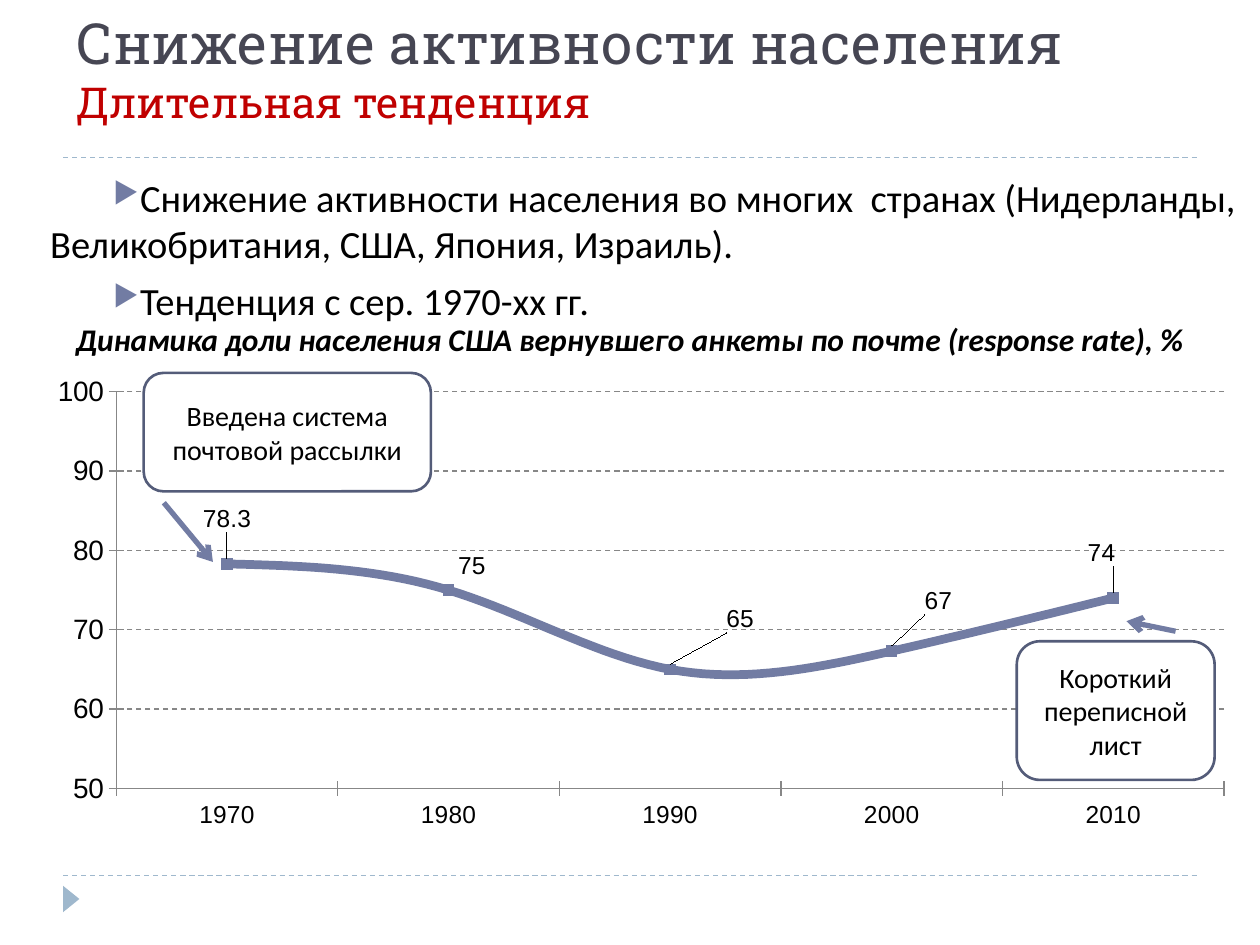
import copy
from dataclasses import dataclass
from typing import Optional

import pptx
import pptx.chart.data
import pptx.dml.color
import pptx.enum.chart
import pptx.enum.dml
import pptx.enum.shapes
import pptx.enum.text
import pptx.oxml
import pptx.oxml.ns
import pptx.util

Inches = pptx.util.Inches
Pt = pptx.util.Pt
qn = pptx.oxml.ns.qn
Align = pptx.enum.text.PP_ALIGN
Anchor = pptx.enum.text.MSO_ANCHOR
Dash = pptx.enum.dml.MSO_LINE
NAMESPACES = pptx.oxml.ns.nsdecls("a", "c")


@dataclass(frozen=True)
class Theme:
    heading_font: str = "Roboto Slab"
    body_font: str = "Calibri"
    chart_font: str = "Arial"
    ink: str = "000000"
    heading: str = "464653"
    warning: str = "C00000"
    accent: str = "727CA3"
    outline: str = "545C79"
    rule: str = "9FB8CD"
    grid: str = "878787"
    paper: str = "FFFFFF"
    title_size: float = 32.4
    subtitle_size: float = 24.3
    body_size: float = 22
    caption_size: float = 18
    note_size: float = 16
    axis_size: float = 16
    label_size: float = 14


THEME = Theme()


@dataclass(frozen=True)
class Area:
    left: float
    top: float
    width: float
    height: float

    def lengths(self) -> tuple:
        return tuple(Inches(v) for v in (self.left, self.top, self.width, self.height))


@dataclass(frozen=True)
class Line:
    start: tuple
    end: tuple
    color: str
    weight: float
    dashed: bool = False
    arrow: bool = False


@dataclass(frozen=True)
class Callout:
    area: Area
    text: str


@dataclass(frozen=True)
class Reading:
    year: str
    share: float
    shift: tuple  # label offset as a fraction of the chart
    label: Optional[str] = None


RULES = [Line((0.5, y), (9.5, y), THEME.rule, 0.75, dashed=True) for y in (6.95, 1.25)]
ARROWS = [Line(start, end, THEME.accent, 3, arrow=True)
          for start, end in (((9.33, 5.01), (8.94, 4.93)), ((1.3, 3.99), (1.69, 4.46)))]
CALLOUTS = [
    Callout(Area(8.07, 5.09, 1.57, 1.1), "Короткий переписной лист"),
    Callout(Area(1.14, 2.96, 2.28, 0.94), "Введена система почтовой рассылки"),
]
READINGS = [
    Reading("1970", 78.3, (0, -0.04)),
    Reading("1980", 75, (0.02, 0)),
    Reading("1990", 65, (0.06, -0.05)),
    Reading("2000", 67.3, (0.04, -0.05), "67"),
    Reading("2010", 74, (-0.01, -0.04)),
]
POINTS = [
    "Снижение активности населения во многих  странах "
    "(Нидерланды, Великобритания, США, Япония, Израиль).",
    "Тенденция с сер. 1970-хх гг.",
]


def rgb(color: str) -> pptx.dml.color.RGBColor:
    return pptx.dml.color.RGBColor.from_string(color)


def style_font(font, name: str, size: float, color: str = THEME.ink) -> None:
    font.name, font.size = name, Pt(size)
    font.color.rgb = rgb(color)


def add_span(para, text: str, name: str, size: float, color: str = THEME.ink):
    span = para.add_run()
    span.text = text
    style_font(span.font, name, size, color)
    return span


def add_box(page, area: Area, anchor=Anchor.TOP):
    frame = page.shapes.add_textbox(*area.lengths()).text_frame
    frame.word_wrap = True
    frame.vertical_anchor = anchor
    return frame


def add_line(page, line: Line) -> None:
    connector = page.shapes.add_connector(
        pptx.enum.shapes.MSO_CONNECTOR.STRAIGHT,
        *(Inches(v) for v in line.start + line.end))
    connector.line.color.rgb = rgb(line.color)
    connector.line.width = Pt(line.weight)
    if line.dashed:
        connector.line.dash_style = Dash.DASH
    if line.arrow:
        connector.line._get_or_add_ln().append(
            pptx.oxml.parse_xml(f'<a:tailEnd {NAMESPACES} type="arrow"/>'))
    connector._element.spPr.append(pptx.oxml.parse_xml(f"<a:effectLst {NAMESPACES}/>"))


def add_preset(page, kind, area: Area, fill: str):
    shape = page.shapes.add_shape(kind, *area.lengths())
    shape.shadow.inherit = False
    shape.fill.solid()
    shape.fill.fore_color.rgb = rgb(fill)
    return shape


def add_callout(page, callout: Callout) -> None:
    shape = add_preset(page, pptx.enum.shapes.MSO_SHAPE.ROUNDED_RECTANGLE,
                       callout.area, THEME.paper)
    shape.line.color.rgb = rgb(THEME.outline)
    shape.line.width = Pt(1.5)
    shape.text_frame.word_wrap = True
    shape.text_frame.vertical_anchor = Anchor.MIDDLE
    para = shape.text_frame.paragraphs[0]
    para.alignment = Align.CENTER
    add_span(para, callout.text, THEME.body_font, THEME.note_size)


def add_bullet(para, text: str) -> None:
    para.space_before = Pt(6)
    props = para._p.get_or_add_pPr()
    props.set("marL", str(Inches(0.3)))
    props.set("indent", str(Inches(0.5)))
    for xml in (f'<a:buClr {NAMESPACES}><a:srgbClr val="{THEME.accent}"/></a:buClr>',
                f'<a:buSzPct {NAMESPACES} val="76000"/>',
                f'<a:buChar {NAMESPACES} char="▶"/>'):
        props.append(pptx.oxml.parse_xml(xml))
    add_span(para, text, THEME.body_font, THEME.body_size)


def manual_layout(inner: bool = False, **values: float):
    target = '<c:layoutTarget val="inner"/>' if inner else ""
    modes = '<c:xMode val="edge"/><c:yMode val="edge"/>' if inner else ""
    body = "".join(f'<c:{key} val="{value}"/>' for key, value in values.items())
    return pptx.oxml.parse_xml(f"<c:layout {NAMESPACES}><c:manualLayout>"
                               f"{target}{modes}{body}</c:manualLayout></c:layout>")


def add_response_chart(page, area: Area, readings: list) -> None:
    data = pptx.chart.data.CategoryChartData()
    data.categories = [reading.year for reading in readings]
    data.add_series("Series 1", [reading.share for reading in readings])
    chart = page.shapes.add_chart(pptx.enum.chart.XL_CHART_TYPE.LINE_MARKERS,
                                  *area.lengths(), data).chart
    chart.has_legend = chart.has_title = False
    style_font(chart.font, THEME.chart_font, THEME.label_size)
    plot_area = chart._chartSpace.chart.plotArea
    for old in plot_area.findall(qn("c:layout")):
        plot_area.remove(old)
    plot_area.insert(0, manual_layout(True, x=0.055, y=0.036, w=0.947, h=0.755))

    # Axes
    scale = chart.value_axis
    scale.minimum_scale, scale.maximum_scale, scale.major_unit = 50, 100, 10
    style_font(scale.tick_labels.font, THEME.chart_font, THEME.axis_size)
    scale.major_gridlines.format.line.dash_style = Dash.DASH
    for part in (scale, scale.major_gridlines, chart.category_axis):
        part.format.line.color.rgb = rgb(THEME.grid)
        part.format.line.width = Pt(0.75)
    for axis in (scale, chart.category_axis):
        axis.major_tick_mark = pptx.enum.chart.XL_TICK_MARK.CROSS

    # Curve and its labels
    chart.plots[0].vary_by_categories = False
    curve = chart.plots[0].series[0]
    curve.smooth = True
    curve.format.line.color.rgb = rgb(THEME.accent)
    curve.format.line.width = Pt(5)
    curve.marker.style = pptx.enum.chart.XL_MARKER_STYLE.SQUARE
    curve.marker.size = 6
    curve.marker.format.fill.solid()
    curve.marker.format.fill.fore_color.rgb = rgb(THEME.accent)
    curve.marker.format.line.color.rgb = rgb(THEME.accent)
    curve.data_labels.show_value = True
    for index, reading in enumerate(readings):
        label = curve.points[index].data_label
        if reading.label:
            add_span(label.text_frame.paragraphs[0], reading.label,
                     THEME.chart_font, THEME.label_size)
        label.position = pptx.enum.chart.XL_LABEL_POSITION.ABOVE
        x, y = reading.shift
        entry = curve.data_labels._element.findall(qn("c:dLbl"))[index]
        entry.find(qn("c:idx")).addnext(manual_layout(x=x, y=y))


def main() -> None:
    deck = pptx.Presentation()
    deck.slide_width, deck.slide_height = Inches(10), Inches(7.5)
    page = deck.slides.add_slide(deck.slide_layouts[6])

    # Rules and corner mark
    for rule in RULES:
        add_line(page, rule)
    mark = add_preset(page, pptx.enum.shapes.MSO_SHAPE.ISOSCELES_TRIANGLE,
                      Area(0.46, 7.07, 0.21, 0.13), THEME.rule)
    mark.rotation = 90
    mark.line.fill.background()

    # Title
    para = add_box(page, Area(0.51, 0, 9.49, 1.06), Anchor.BOTTOM).paragraphs[0]
    add_span(para, "Снижение активности населения", THEME.heading_font,
             THEME.title_size, THEME.heading)
    para.add_line_break()
    add_span(para, "Длительная тенденция", THEME.heading_font,
             THEME.subtitle_size, THEME.warning)

    # Bulleted points
    frame = add_box(page, Area(0, 1.33, 10, 1.71))
    for index, text in enumerate(POINTS):
        add_bullet(frame.add_paragraph() if index else frame.paragraphs[0], text)

    # Chart with its caption
    para = add_box(page, Area(0, 2.49, 10, 0.4)).paragraphs[0]
    para.alignment = Align.CENTER
    caption = add_span(
        para, "Динамика доли населения США вернувшего анкеты по почте (response rate), %",
        THEME.body_font, THEME.caption_size)
    caption.font.bold = caption.font.italic = True
    add_response_chart(page, Area(0.43, 2.96, 9.29, 4.17), READINGS)

    # Callouts and arrows
    for callout in CALLOUTS:
        add_callout(page, callout)
    for arrow in ARROWS:
        add_line(page, arrow)

    deck.save("out.pptx")


if __name__ == "__main__":
    main()
